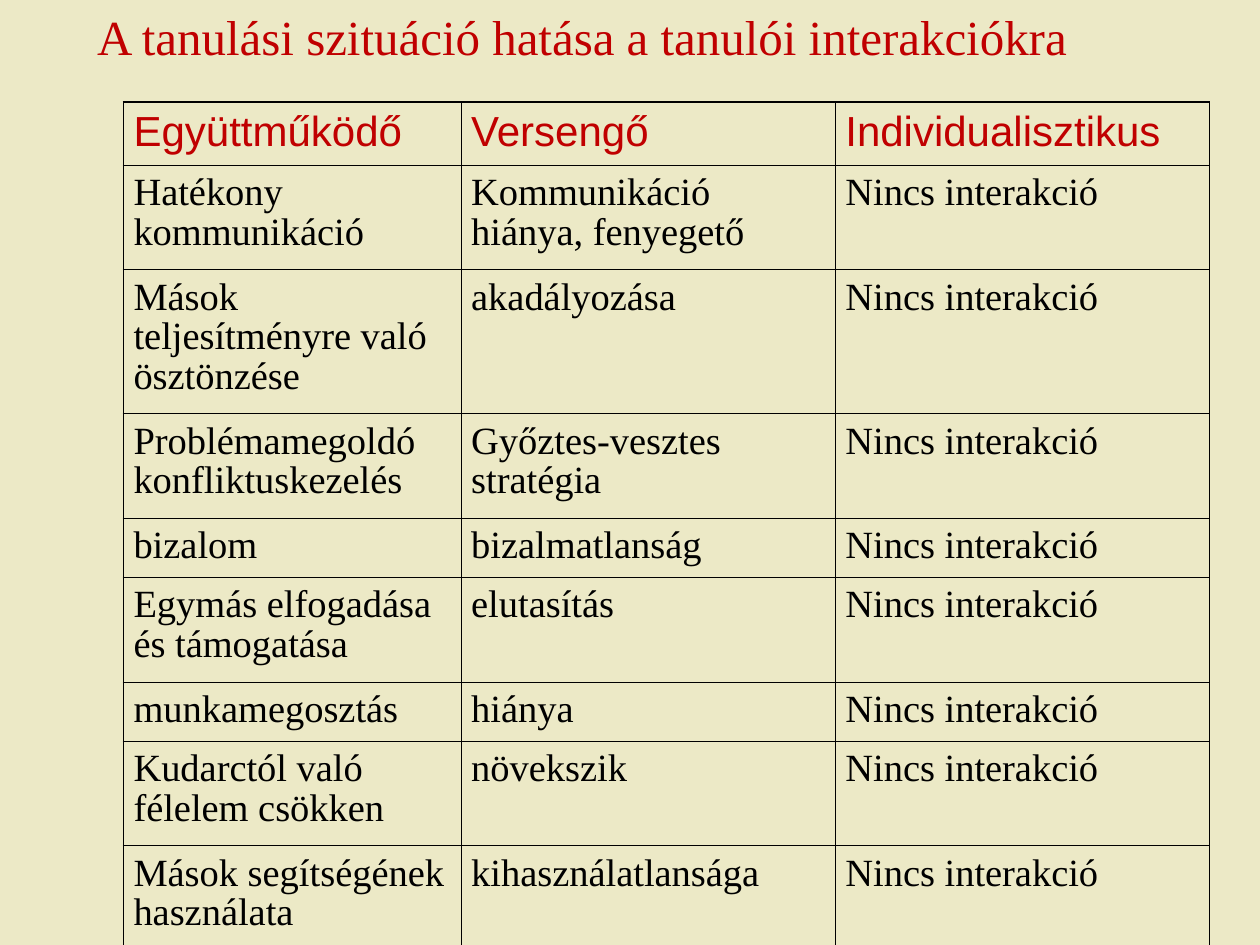
from lxml import etree
from pptx import Presentation
from pptx.dml.color import RGBColor
from pptx.enum.text import MSO_ANCHOR, MSO_AUTO_SIZE, PP_ALIGN
from pptx.oxml.ns import qn
from pptx.util import Inches, Pt

TOP, LEFT, GROW = MSO_ANCHOR.TOP, PP_ALIGN.LEFT, MSO_AUTO_SIZE.SHAPE_TO_FIT_TEXT
RED, BLACK, CREAM = "C00000", "000000", "ECE9C6"
SERIF, SANS = "Times New Roman", "Arial"
THIN, THICK = 0.45, 1.08
UNIT = 0.1  # inches per grid step: 100 columns by 75 rows

HEAD = ["Együttműködő", "Versengő", "Individualisztikus"]
PAIRS = [
    ("Hatékony kommunikáció", "Kommunikáció hiánya, fenyegető"),
    ("Mások teljesítményre való ösztönzése", "akadályozása"),
    ("Problémamegoldó konfliktuskezelés", "Győztes-vesztes stratégia"),
    ("bizalom", "bizalmatlanság"),
    ("Egymás elfogadása és támogatása", "elutasítás"),
    ("munkamegosztás", "hiánya"),
    ("Kudarctól való félelem csökken", "növekszik"),
    ("Mások segítségének használata", "kihasználatlansága"),
]
ROWS = [HEAD] + [[*pair, "Nincs interakció"] for pair in PAIRS]
WIDTHS = [26.8, 29.7, 29.7]
SHORT, TALL = 4.7, 8.3
HEIGHTS = [5, TALL, 10.6, TALL, SHORT, TALL, SHORT, TALL, TALL]


def color(text):
    return RGBColor.from_string(text)


def grid(steps):
    return Inches(steps * UNIT)


def edge(cell, lines):
    """Draw the cell's borders; lines maps L, R, T, B to widths in points."""
    props = cell._tc.get_or_add_tcPr()
    for i, (side, width) in enumerate(lines.items()):
        line = etree.Element(qn("a:ln" + side), w=str(int(Pt(width))))
        fill = etree.SubElement(line, qn("a:solidFill"))
        etree.SubElement(fill, qn("a:srgbClr"), val=BLACK)
        props.insert(i, line)


class Deck:
    def __init__(self):
        self.show = Presentation()
        self.show.slide_width, self.show.slide_height = grid(100), grid(75)
        self.slide = self.show.slides.add_slide(self.show.slide_layouts[5])
        back = self.slide.background.fill
        back.solid()
        back.fore_color.rgb = color(CREAM)

    def style(self, para, size, face, hue, before=0, spacing=1.0):
        para.alignment = LEFT
        para.space_before, para.line_spacing = Pt(before), spacing
        font = para.font
        font.size, font.name, font.color.rgb = Pt(size), face, color(hue)

    def title(self, text, left, top, width, height):
        shape = self.slide.shapes.title
        shape.left, shape.top = grid(left), grid(top)
        shape.width, shape.height = grid(width), grid(height)
        frame = shape.text_frame
        frame.text = text
        frame.vertical_anchor, frame.word_wrap = TOP, True
        frame.auto_size = GROW
        self.style(frame.paragraphs[0], 28, SERIF, RED, before=17.5)

    def table(self, rows, left, top, widths, heights):
        table = self.slide.shapes.add_table(
            len(rows), len(widths), grid(left), grid(top),
            grid(sum(widths)), grid(sum(heights))).table
        table.first_row = table.horz_banding = False
        for column, width in zip(table.columns, widths):
            column.width = grid(width)
        for row, height in zip(table.rows, heights):
            row.height = grid(height)
        end, base = len(widths) - 1, len(rows) - 1
        for r, row in enumerate(rows):
            for c, text in enumerate(row):
                cell = table.cell(r, c)
                self.fill(cell, text, r == 0)
                outer = {"L": c == 0, "R": c == end, "T": r == 0, "B": r == base}
                edge(cell, {s: THICK if out else THIN for s, out in outer.items()})

    def fill(self, cell, text, head):
        cell.text = text
        cell.fill.background()
        cell.vertical_anchor = TOP
        cell.margin_left = cell.margin_right = Inches(0.08)
        cell.margin_top, cell.margin_bottom = Inches(0.07), Inches(0.05)
        look = (24, SANS, RED) if head else (22, SERIF, BLACK)
        self.style(cell.text_frame.paragraphs[0], *look, spacing=0.94 if head else 0.93)


def main():
    deck = Deck()
    deck.table(ROWS, 9.8, 8.1, WIDTHS, HEIGHTS)
    deck.title("A tanulási szituáció hatása a tanulói interakciókra", 6.7, 0, 80.2, 5.7)
    deck.show.save("out.pptx")


if __name__ == "__main__":
    main()
